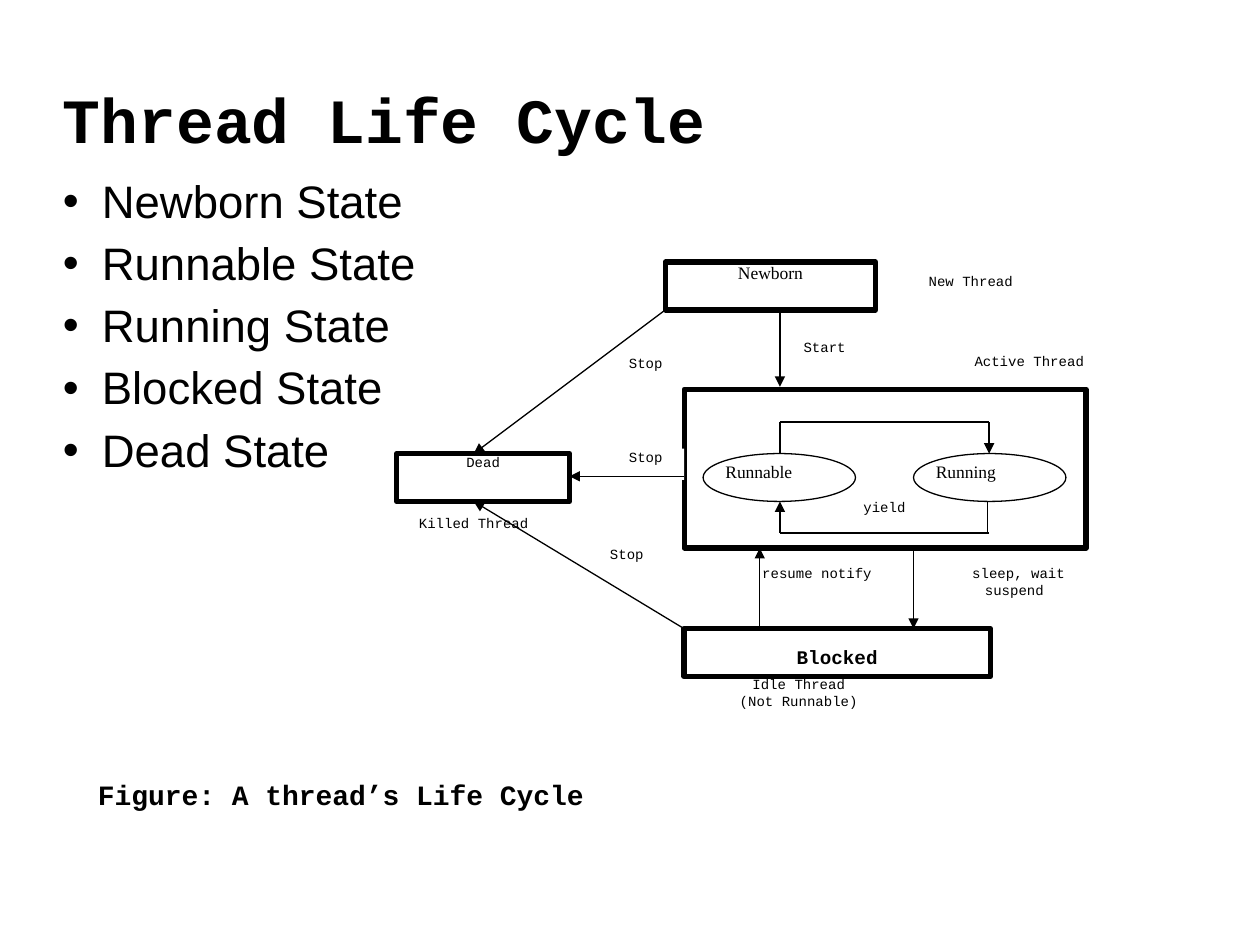
from lxml import etree
from pptx import Presentation
from pptx.dml.color import RGBColor
from pptx.enum.shapes import MSO_CONNECTOR, MSO_SHAPE
from pptx.enum.text import MSO_ANCHOR, PP_ALIGN
from pptx.oxml.ns import qn
from pptx.util import Inches, Pt

RECT, OVAL = MSO_SHAPE.RECTANGLE, MSO_SHAPE.OVAL
STRAIGHT = MSO_CONNECTOR.STRAIGHT
LEFT, CENTER = PP_ALIGN.LEFT, PP_ALIGN.CENTER
TOP, MIDDLE = MSO_ANCHOR.TOP, MSO_ANCHOR.MIDDLE
COLORS = {"ink": "000000", "paper": "FFFFFF"}
INK = RGBColor.from_string(COLORS["ink"])
PAPER = RGBColor.from_string(COLORS["paper"])
MONO, SERIF, SANS = "Courier New", "Times New Roman", "Arial"


def write(frame, text, font, size, bold=False, align=LEFT):
    frame.word_wrap = True
    frame.text = text
    for paragraph in frame.paragraphs:
        paragraph.alignment = align
        for run in paragraph.runs:
            run.font.name = font
            run.font.size = Pt(size)
            run.font.bold = bold
            run.font.color.rgb = INK


def add_node(kind, box, text, font=MONO, size=8, bold=False, align=CENTER,
             border=0, top_inset=0):
    """Add a white shape with top-anchored text; border 0 means no outline."""
    node = slide.shapes.add_shape(kind, *map(Inches, box))
    node.shadow.inherit = False
    node.fill.solid()
    node.fill.fore_color.rgb = PAPER
    if border:
        node.line.color.rgb = INK
        node.line.width = Pt(border)
    else:
        node.line.fill.background()
    frame = node.text_frame
    frame.margin_left = frame.margin_right = frame.margin_bottom = 0
    frame.margin_top = Inches(top_inset)
    frame.vertical_anchor = TOP
    write(frame, text, font, size, bold, align)


prs = Presentation()
prs.slide_width, prs.slide_height = Inches(10), Inches(7.5)
slide = prs.slides.add_slide(prs.slide_layouts[6])

title = slide.shapes.add_textbox(Inches(0.4), Inches(0.56), Inches(9.21), Inches(0.84))
title.text_frame.vertical_anchor = MIDDLE
write(title.text_frame, "Thread Life Cycle", MONO, 36, bold=True)
title.text_frame.paragraphs[0].line_spacing = 0.9

state_names = ["Newborn", "Runnable", "Running", "Blocked", "Dead"]
state_list = slide.shapes.add_textbox(Inches(0.4), Inches(1.37), Inches(9.21), Inches(5.48))
write(state_list.text_frame, "\n".join(f"{name} State" for name in state_names), SANS, 26)
for index, paragraph in enumerate(state_list.text_frame.paragraphs):
    paragraph.line_spacing = 0.9
    paragraph.space_before = Pt(7.5 if index else 0)
    properties = paragraph._p.get_or_add_pPr()
    properties.set("marL", str(Inches(0.31)))
    properties.set("indent", str(-Inches(0.31)))
    etree.SubElement(properties, qn("a:buFont")).set("typeface", SANS)
    etree.SubElement(properties, qn("a:buChar")).set("char", "•")

# Labels that lie beneath the state boxes
for box, text in [
    ((4.82, 2.81, 0.61, 0.25), "Stop"),
    ((6.19, 2.69, 0.71, 0.25), "Start"),
    ((7.1, 2.16, 1.21, 0.25), "New Thread"),
    ((3, 4.08, 1.52, 0.25), "Killed Thread"),
    ((5.43, 5.36, 1.82, 0.38), "Idle Thread\n(Not Runnable)"),
    ((7.4, 4.48, 1.37, 0.38), "sleep, wait\nsuspend "),
    ((6.03, 4.48, 0.91, 0.38), "resume notify"),
    ((4.67, 4.33, 0.61, 0.25), "Stop"),
]:
    add_node(RECT, box, text)

# States
add_node(RECT, (5.43, 3.09, 3.19, 1.26), "", border=3)
for left, state in [(5.58, "Runnable"), (7.25, "Running")]:
    add_node(OVAL, (left, 3.6, 1.21, 0.38), state, SERIF, 10, align=LEFT, border=0.75)
add_node(RECT, (5.28, 2.08, 1.67, 0.38), "Newborn", SERIF, 10, border=3)
add_node(RECT, (5.43, 4.99, 2.43, 0.38), "Blocked", size=11, bold=True,
         border=3, top_inset=0.13)
add_node(RECT, (3.15, 3.6, 1.37, 0.38), "Dead", border=3)

# Labels that lie above the active-thread box
for box, text in [
    ((6.64, 3.96, 0.76, 0.25), "yield"),
    ((7.42, 2.8, 1.5, 0.27), "Active Thread"),
    ((4.82, 3.56, 0.61, 0.25), "Stop"),
]:
    add_node(RECT, box, text)

# Transitions: start, end, arrowhead at the end
for start, end, has_arrow in [
    ((6.19, 2.44), (6.19, 3.07), True),
    ((6.19, 3.6), (6.19, 3.35), False),
    ((6.19, 3.35), (7.85, 3.35), False),
    ((7.85, 3.35), (7.85, 3.6), True),
    ((7.84, 3.98), (7.84, 4.23), False),
    ((7.85, 4.23), (6.19, 4.23), False),
    ((6.19, 4.23), (6.19, 3.98), True),
    ((6.03, 4.99), (6.03, 4.35), True),
    ((7.25, 4.35), (7.25, 4.99), True),
    ((5.28, 2.46), (3.76, 3.6), True),
    ((5.43, 4.99), (3.76, 3.98), True),
    ((5.43, 3.78), (4.52, 3.78), True),
]:
    transition = slide.shapes.add_connector(STRAIGHT, *map(Inches, start + end))
    transition.line.color.rgb = INK
    transition.line.width = Pt(0.75)
    if has_arrow:
        line = transition.line._get_or_add_ln()
        etree.SubElement(line, qn("a:tailEnd")).set("type", "triangle")
    etree.SubElement(transition._element.spPr, qn("a:effectLst"))

add_node(RECT, (0.65, 6.17, 4.11, 0.26), "Figure: A thread’s Life Cycle", size=16, bold=True)

prs.save("out.pptx")
